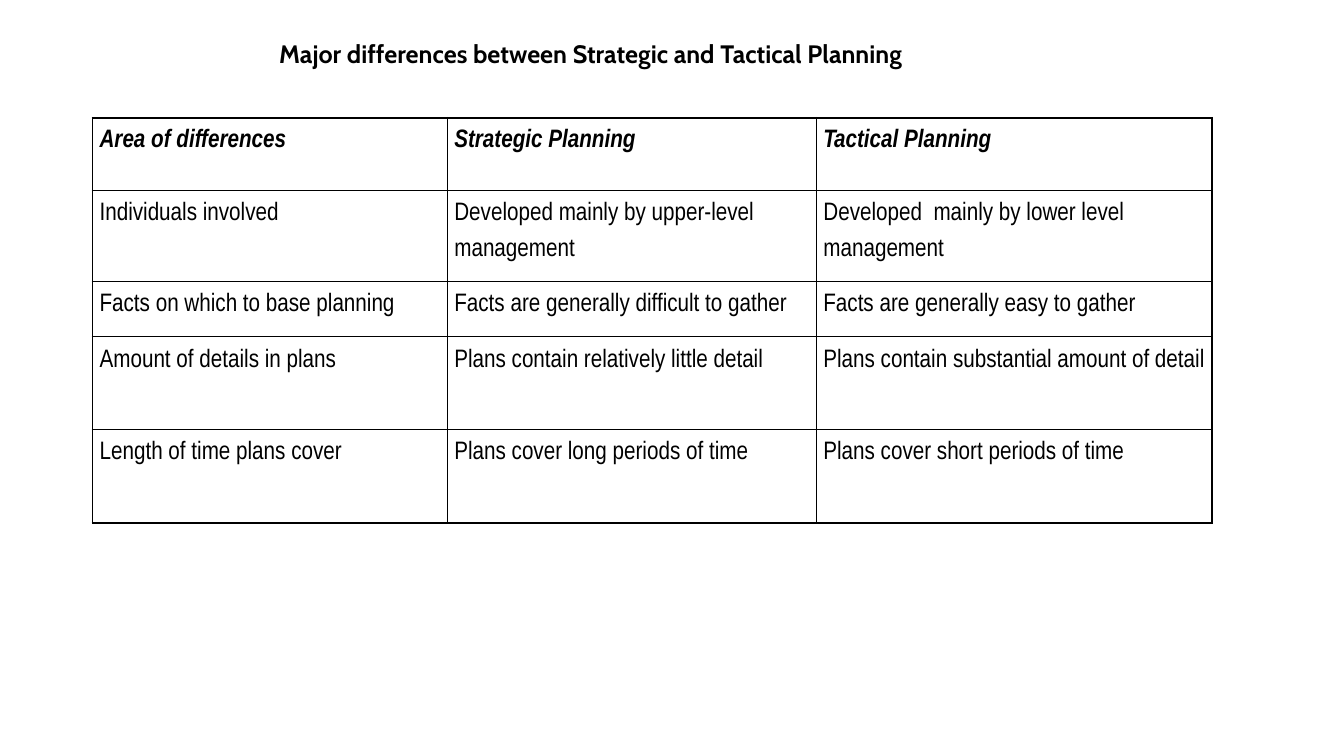
from dataclasses import dataclass

from lxml import etree
from pptx import Presentation
from pptx.dml.color import RGBColor
from pptx.enum.text import MSO_ANCHOR, MSO_AUTO_SIZE, PP_ALIGN
from pptx.oxml.ns import qn
from pptx.slide import Slide
from pptx.table import _Cell
from pptx.text.text import TextFrame
from pptx.util import Cm, Pt

TOP = MSO_ANCHOR.TOP
LEFT = PP_ALIGN.LEFT
FIT_SHAPE = MSO_AUTO_SIZE.SHAPE_TO_FIT_TEXT


@dataclass(frozen=True)
class Theme:
    ink: str = "000000"
    title_font: str = "Cabin"
    table_font: str = "Arial Narrow"
    size: float = 18
    line_spacing: float = 1.5
    outer_line: float = 1.5
    inner_line: float = 1


@dataclass(frozen=True)
class PlanningRow:
    height: float
    area: str
    strategic: str
    tactical: str

    def texts(self) -> tuple[str, str, str]:
        return self.area, self.strategic, self.tactical


THEME = Theme()
TITLE = "Major differences between Strategic and Tactical Planning"
COLUMN_WIDTHS = (8.94, 9.3, 9.98)
ROWS = (
    PlanningRow(1.83, "Area of differences", "Strategic Planning", "Tactical Planning"),
    PlanningRow(2.29, "Individuals involved",
                "Developed mainly by upper-level management",
                "Developed  mainly by lower level management"),
    PlanningRow(1.4, "Facts on which to base planning",
                "Facts are generally difficult to gather",
                "Facts are generally easy to gather"),
    PlanningRow(2.34, "Amount of details in plans",
                "Plans contain relatively little detail",
                "Plans contain substantial amount of detail"),
    PlanningRow(2.36, "Length of time plans cover",
                "Plans cover long periods of time",
                "Plans cover short periods of time"),
)


def write(tf: TextFrame, text: str, **font_format) -> None:
    p = tf.paragraphs[0]
    p.alignment = LEFT
    r = p.add_run()
    r.text = text
    r.font.color.rgb = RGBColor.from_string(THEME.ink)
    for name, value in {"size": Pt(THEME.size), **font_format}.items():
        setattr(r.font, name, value)


def add_title(s: Slide) -> None:
    sp = s.shapes.title
    place = {"left": 6.78, "top": 0.84, "width": 17.78, "height": 1.02}
    for name, value in place.items():
        setattr(sp, name, Cm(value))
    tf = sp.text_frame
    frame = {"word_wrap": True, "vertical_anchor": TOP, "auto_size": FIT_SHAPE}
    for name, value in frame.items():
        setattr(tf, name, value)
    write(tf, TITLE, name=THEME.title_font, bold=True)


def set_borders(cell: _Cell, row: int, col: int) -> None:
    outer_sides = {
        "L": col == 0,
        "R": col == len(COLUMN_WIDTHS) - 1,
        "T": row == 0,
        "B": row == len(ROWS) - 1,
    }
    tc_pr = cell._tc.get_or_add_tcPr()
    for side, is_outer in outer_sides.items():
        width = THEME.outer_line if is_outer else THEME.inner_line
        ln = etree.SubElement(tc_pr, qn(f"a:ln{side}"), w=str(Pt(width)))
        fill = etree.SubElement(ln, qn("a:solidFill"))
        etree.SubElement(fill, qn("a:srgbClr"), val=THEME.ink)


def fill_cell(cell: _Cell, text: str, row: int, col: int) -> None:
    margins = {"margin_left": 0.18, "margin_right": 0.18,
               "margin_top": 0, "margin_bottom": 0}
    for name, value in margins.items():
        setattr(cell, name, Cm(value))
    cell.vertical_anchor = TOP
    set_borders(cell, row, col)
    cell.fill.background()
    is_header = row == 0
    write(cell.text_frame, text, name=THEME.table_font,
          bold=is_header, italic=is_header)
    cell.text_frame.paragraphs[0].line_spacing = THEME.line_spacing


def add_planning_table(s: Slide) -> None:
    table = s.shapes.add_table(
        len(ROWS), len(COLUMN_WIDTHS), Cm(2.33), Cm(2.97),
        Cm(sum(COLUMN_WIDTHS)), Cm(sum(row.height for row in ROWS)),
    ).table
    table.first_row = False
    table.horz_banding = False
    for column, width in zip(table.columns, COLUMN_WIDTHS):
        column.width = Cm(width)
    for i, row in enumerate(ROWS):
        table.rows[i].height = Cm(row.height)
        for j, text in enumerate(row.texts()):
            fill_cell(table.cell(i, j), text, i, j)


def main() -> None:
    prs = Presentation()
    prs.slide_width = Cm(33.87)
    prs.slide_height = Cm(19.05)
    s = prs.slides.add_slide(prs.slide_layouts.get_by_name("Title Only"))
    add_title(s)
    add_planning_table(s)
    prs.save("out.pptx")


if __name__ == "__main__":
    main()
